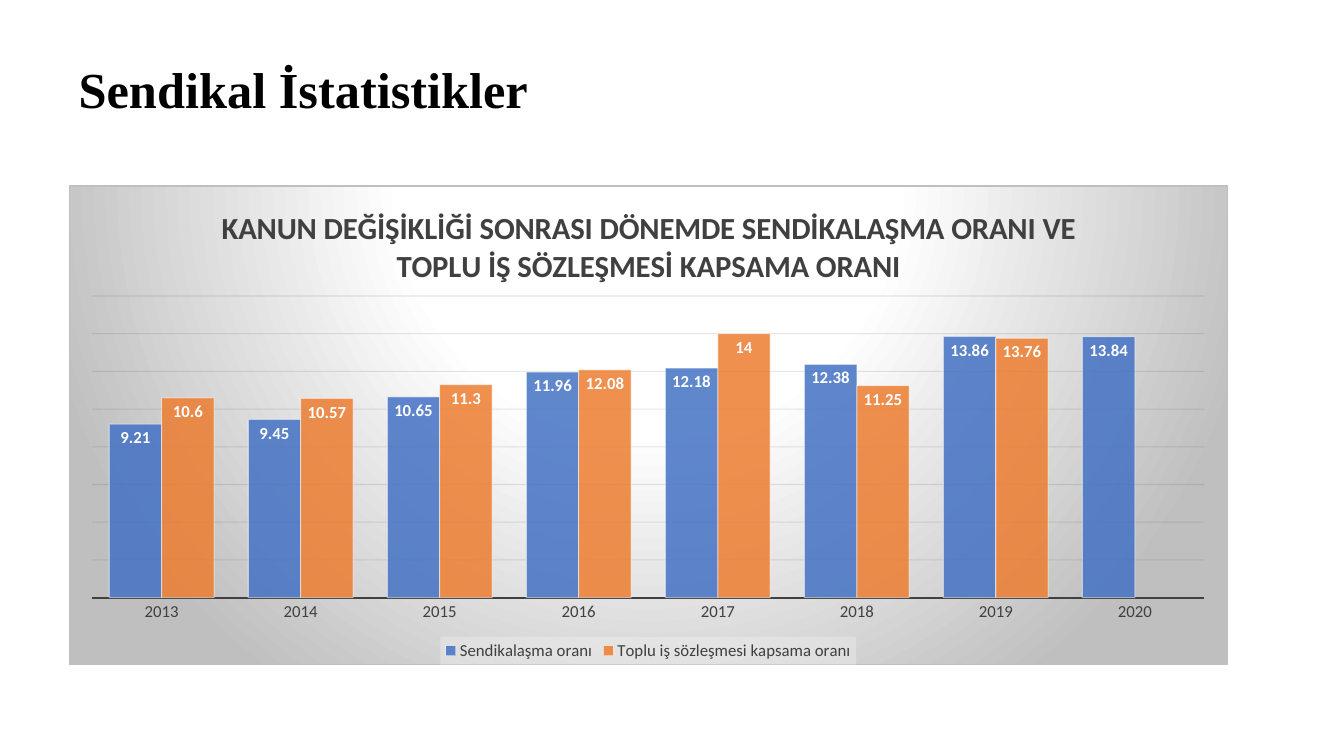
from lxml import etree
from pptx import Presentation
from pptx.chart.data import CategoryChartData
from pptx.dml.color import RGBColor
from pptx.enum.chart import XL_CHART_TYPE, XL_LABEL_POSITION, XL_LEGEND_POSITION, XL_TICK_MARK
from pptx.enum.text import MSO_ANCHOR, PP_ALIGN
from pptx.oxml import parse_xml
from pptx.oxml.ns import nsdecls, qn
from pptx.util import Inches, Pt

CLUSTERED = XL_CHART_TYPE.COLUMN_CLUSTERED
INSIDE_END = XL_LABEL_POSITION.INSIDE_END
BOTTOM = XL_LEGEND_POSITION.BOTTOM
NO_TICK = XL_TICK_MARK.NONE
MIDDLE = MSO_ANCHOR.MIDDLE
LEFT = PP_ALIGN.LEFT
TITLE_ONLY_LAYOUT = 5

COLORS = {
    "black": "000000",
    "white": "FFFFFF",
    "text": "404040",
    "grid": "0D0D0D",
    "border": "BFBFBF",
    "legend": "F2F2F2",
    "blue": "4472C4",
    "orange": "ED7D31",
}
YEARS = [str(year) for year in range(2013, 2021)]
SERIES = [
    ("Sendikalaşma oranı", "blue",
     [9.21, 9.45, 10.65, 11.96, 12.18, 12.38, 13.86, 13.84]),
    ("Toplu iş sözleşmesi kapsama oranı", "orange",
     [10.6, 10.57, 11.3, 12.08, 14, 11.25, 13.76, None]),
]
CHART_TITLE = ("KANUN DEĞİŞİKLİĞİ SONRASI DÖNEMDE SENDİKALAŞMA ORANI VE "
               "TOPLU İŞ SÖZLEŞMESİ KAPSAMA ORANI")


def style_font(font, size, color, bold=False, name="Calibri"):
    """Set the size, colour, weight and typeface of a font."""
    font.size = Pt(size)
    font.bold = bold
    font.name = name
    font.color.rgb = RGBColor.from_string(COLORS[color])


def set_fill(fill, color, opacity=100):
    """Apply a solid fill with an opacity in percent."""
    fill.solid()
    fill.fore_color.rgb = RGBColor.from_string(COLORS[color])
    if opacity < 100:
        solid = fill._xPr.find(qn("a:solidFill"))
        alpha = etree.SubElement(solid[0], qn("a:alpha"))
        alpha.set("val", str(opacity * 1000))


def style_line(line, color, width, opacity=100):
    """Apply a solid line with a width in points."""
    line.width = Pt(width)
    set_fill(line.fill, color, opacity)


def add_title(slide, text):
    """Fill and place the title placeholder."""
    title = slide.shapes.title
    title.left, title.top = Inches(0.68), Inches(0.24)
    title.width, title.height = Inches(11.95), Inches(1.35)
    title.text_frame.vertical_anchor = MIDDLE
    paragraph = title.text_frame.paragraphs[0]
    paragraph.alignment = LEFT
    paragraph.line_spacing = 0.9
    run = paragraph.add_run()
    run.text = text
    style_font(run.font, 36, "black", True, "Times New Roman")


def add_chart_title(chart):
    """Write the heading of the chart."""
    chart.has_title = True
    chart.chart_title.include_in_layout = False
    run = chart.chart_title.text_frame.paragraphs[0].add_run()
    run.text = CHART_TITLE
    style_font(run.font, 22, "text", True)


def style_axes(chart):
    """Format the year axis and the hidden value axis with its grid."""
    years = chart.category_axis
    years.major_tick_mark = years.minor_tick_mark = NO_TICK
    style_font(years.tick_labels.font, 12, "text")
    style_line(years.format.line, "text", 1.5)
    values = chart.value_axis
    values.minimum_scale, values.maximum_scale = 0, 16
    values.major_unit = 2
    values.has_major_gridlines = True
    style_line(values.major_gridlines.format.line, "grid", 0.75, 10)
    values.visible = False


def style_series(series, color):
    """Format the columns of a series and their value labels."""
    series.invert_if_negative = False
    set_fill(series.format.fill, color, 85)
    style_line(series.format.line, "white", 0.75, 50)
    labels = series.data_labels
    labels.show_value = True
    labels.position = INSIDE_END
    style_font(labels.font, 12, "white", True)


def add_legend(chart):
    """Place the legend below the columns on a translucent panel."""
    chart.has_legend = True
    legend = chart.legend
    legend.position = BOTTOM
    legend.include_in_layout = False
    style_font(legend.font, 12, "text")
    panel = parse_xml(
        f'<c:spPr {nsdecls("c", "a")}><a:solidFill><a:srgbClr val="{COLORS["legend"]}">'
        '<a:alpha val="39000"/></a:srgbClr></a:solidFill></c:spPr>')
    legend._element.find(qn("c:txPr")).addprevious(panel)


def style_chart_area(chart):
    """Give the chart area a radial gradient and a thin border."""
    stops = "".join(
        f'<a:gs pos="{position * 1000}"><a:srgbClr val="{COLORS[color]}"/></a:gs>'
        for position, color in ((0, "white"), (39, "white"), (100, "border")))
    area = parse_xml(
        f'<c:spPr {nsdecls("c", "a")}><a:gradFill><a:gsLst>{stops}</a:gsLst>'
        '<a:path path="circle"><a:fillToRect l="50000" t="-80000" r="50000" b="180000"/>'
        f'</a:path></a:gradFill><a:ln w="{Pt(0.75)}"><a:solidFill>'
        f'<a:srgbClr val="{COLORS["border"]}"/></a:solidFill></a:ln></c:spPr>')
    chart._chartSpace.find(qn("c:txPr")).addprevious(area)


def place_plot(chart, **fractions):
    """Fix the inner plot area as fractions of the chart."""
    plot_area = chart._chartSpace.chart.plotArea
    for layout in plot_area.findall(qn("c:layout")):
        plot_area.remove(layout)
    sizes = "".join(f'<c:{key} val="{value}"/>' for key, value in fractions.items())
    plot_area.insert(0, parse_xml(
        f'<c:layout {nsdecls("c")}><c:manualLayout><c:layoutTarget val="inner"/>'
        f'<c:xMode val="edge"/><c:yMode val="edge"/>{sizes}</c:manualLayout></c:layout>'))


def add_union_chart(slide):
    """Add the clustered columns of union and agreement rates."""
    data = CategoryChartData()
    data.categories = YEARS
    for name, _, values in SERIES:
        data.add_series(name, values)
    chart = slide.shapes.add_chart(
        CLUSTERED, Inches(0.68), Inches(1.84), Inches(11.5), Inches(4.76), data).chart
    style_font(chart.font, 10, "black")
    add_chart_title(chart)
    style_axes(chart)
    plot = chart.plots[0]
    plot.gap_width, plot.overlap = 65, 0
    plot.vary_by_categories = False
    for series, (_, color, _) in zip(plot.series, SERIES):
        style_series(series, color)
    add_legend(chart)
    style_chart_area(chart)
    place_plot(chart, x=0.02, y=0.23, w=0.96, h=0.63)


def main():
    """Build the slide and save the presentation."""
    presentation = Presentation()
    presentation.slide_width = Inches(13.33)
    presentation.slide_height = Inches(7.5)
    slide = presentation.slides.add_slide(presentation.slide_layouts[TITLE_ONLY_LAYOUT])
    add_title(slide, "Sendikal İstatistikler")
    add_union_chart(slide)
    presentation.save("out.pptx")


if __name__ == "__main__":
    main()
